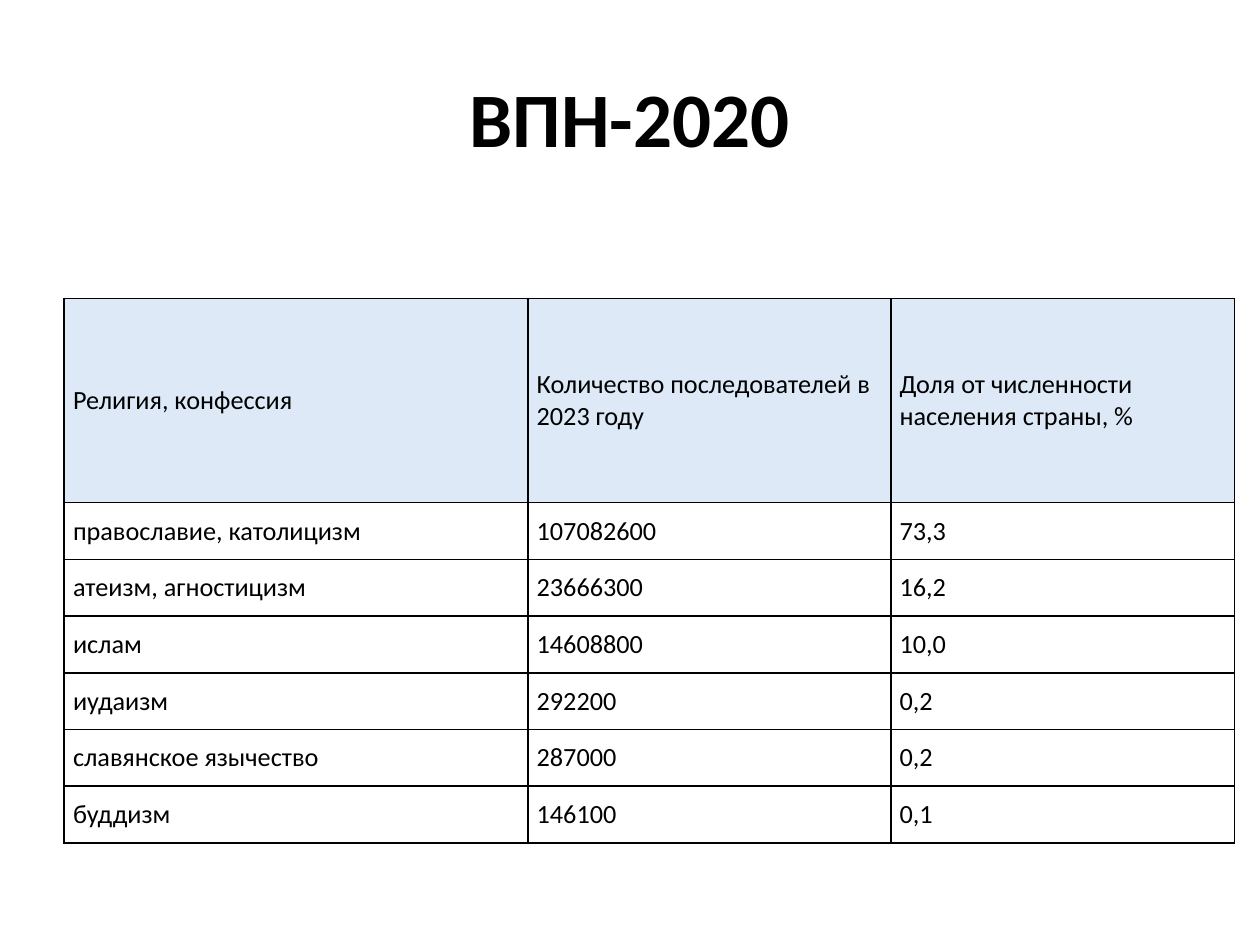
"""Build a slide with a table of religious affiliation from the 2020 census."""
from lxml import etree
from pptx import Presentation
from pptx.dml.color import RGBColor
from pptx.enum.text import MSO_ANCHOR, PP_ALIGN
from pptx.oxml.ns import qn
from pptx.util import Inches, Pt

MIDDLE = MSO_ANCHOR.MIDDLE
CENTER = PP_ALIGN.CENTER

TITLE = "ВПН-2020"
HEADER = (
    "Религия, конфессия",
    "Количество последователей в 2023 году",
    "Доля от численности населения страны, %",
)
RELIGIONS = [
    ("православие, католицизм", "107082600", "73,3"),
    ("атеизм, агностицизм", "23666300", "16,2"),
    ("ислам", "14608800", "10,0"),
    ("иудаизм", "292200", "0,2"),
    ("славянское язычество", "287000", "0,2"),
    ("буддизм", "146100", "0,1"),
]

THEME = {
    "font": "Calibri",
    "text": "000000",
    "border": "000000",
    "header_fill": "DDE9F7",
    "body_fill": "FFFFFF",
    "title_size": 44,
    "body_size": 15,
    "border_width": 1,
}
SLIDE_SIZE = (10, 7.5)
TITLE_BOX = {"left": 0.5, "top": 0.3, "width": 9, "height": 1.25}
TABLE_ORIGIN = (0.51, 2.37)
COLUMN_WIDTHS = (3.68, 2.88, 2.73)
ROW_HEIGHTS = (1.62,) + (0.45,) * len(RELIGIONS)
CELL_MARGINS = {
    "margin_left": 0.07,
    "margin_right": 0.07,
    "margin_top": 0.02,
    "margin_bottom": 0.02,
}


def set_attributes(target, values):
    for name, value in values.items():
        setattr(target, name, value)


def format_text(paragraph, size, bold):
    values = {"name": THEME["font"], "size": Pt(size), "bold": bold}
    set_attributes(paragraph.font, values)
    paragraph.font.color.rgb = RGBColor.from_string(THEME["text"])


def add_borders(cell):
    properties = cell._tc.get_or_add_tcPr()
    for side in ("a:lnL", "a:lnR", "a:lnT", "a:lnB"):
        width = str(Pt(THEME["border_width"]))
        line = etree.SubElement(properties, qn(side), w=width)
        fill = etree.SubElement(line, qn("a:solidFill"))
        etree.SubElement(fill, qn("a:srgbClr"), val=THEME["border"])


def fill_cell(cell, text, color):
    cell.text = text
    cell.vertical_anchor = MIDDLE
    set_attributes(cell, {name: Inches(margin) for name, margin in CELL_MARGINS.items()})
    format_text(cell.text_frame.paragraphs[0], THEME["body_size"], False)
    add_borders(cell)
    cell.fill.solid()
    cell.fill.fore_color.rgb = RGBColor.from_string(color)


def add_title(slide):
    title = slide.shapes.title
    set_attributes(title, {name: Inches(length) for name, length in TITLE_BOX.items()})
    title.text = TITLE
    title.text_frame.vertical_anchor = MIDDLE
    paragraph = title.text_frame.paragraphs[0]
    paragraph.alignment = CENTER
    format_text(paragraph, THEME["title_size"], True)


def add_religion_table(slide):
    rows = [HEADER, *RELIGIONS]
    size = (sum(COLUMN_WIDTHS), sum(ROW_HEIGHTS))
    box = [Inches(length) for length in TABLE_ORIGIN + size]
    table = slide.shapes.add_table(len(rows), len(HEADER), *box).table
    set_attributes(table, {"first_row": False, "horz_banding": False})
    for column, width in zip(table.columns, COLUMN_WIDTHS):
        column.width = Inches(width)
    for row, height, texts in zip(table.rows, ROW_HEIGHTS, rows):
        row.height = Inches(height)
        color = THEME["header_fill" if texts is HEADER else "body_fill"]
        for cell, text in zip(row.cells, texts):
            fill_cell(cell, text, color)


def main():
    presentation = Presentation()
    presentation.slide_width, presentation.slide_height = map(Inches, SLIDE_SIZE)
    slide = presentation.slides.add_slide(presentation.slide_layouts[5])
    add_title(slide)
    add_religion_table(slide)
    presentation.save("out.pptx")


if __name__ == "__main__":
    main()
